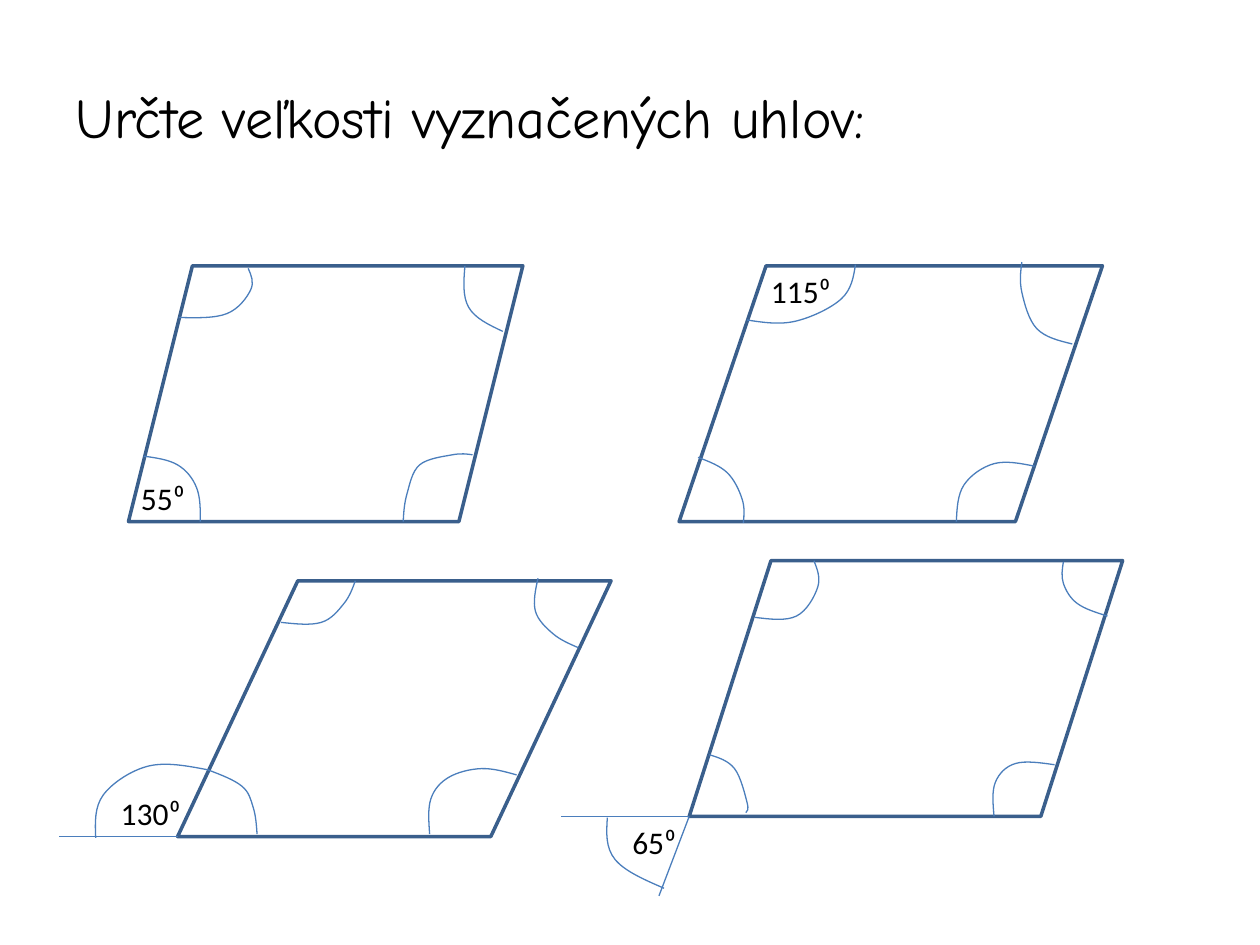
import pptx
import pptx.dml.color
import pptx.enum.shapes
import pptx.enum.text
import pptx.util
from lxml import etree
from pptx.util import Inches

BLACK = pptx.dml.color.RGBColor(0x00, 0x00, 0x00)
SIDE_BLUE = pptx.dml.color.RGBColor(0x3A, 0x5F, 0x8C)
ARC_BLUE = pptx.dml.color.RGBColor(0x4B, 0x7E, 0xBC)
SIDE_HEIGHT = 2.03

FIGURES = [
    {
        "box": (1.02, 2.11, 3.13, SIDE_HEIGHT), "slant": 0.25,
        "label": ("55⁰", 0, 1.64, 0.56), "rays": [],
        "arcs": [
            [(0.12, 1.51), (0.39, 1.58), (0.54, 1.76), (0.57, 2.03)],
            [(0.4, 0.41), (0.78, 0.38), (0.97, 0.19), (0.95, 0.02)],
            [(2.97, 0.52), (2.7, 0.33), (2.67, 0)],
            [(2.18, 2.03), (2.21, 1.81), (2.31, 1.58), (2.57, 1.5), (2.73, 1.5)],
        ],
    },
    {
        "box": (5.39, 2.11, 3.36, SIDE_HEIGHT), "slant": 0.34,
        "label": ("115⁰", 0.63, 0, 0.68), "rays": [],
        "arcs": [
            [(0.15, 1.52), (0.38, 1.64), (0.5, 1.85), (0.51, 2.04)],
            [(2.2, 2.03), (2.26, 1.74), (2.5, 1.57), (2.82, 1.59)],
            [(0.54, 0.43), (0.92, 0.44), (1.29, 0.26), (1.4, -0.01)],
            [(3.12, 0.62), (2.84, 0.5), (2.72, 0.21), (2.72, -0.03)],
        ],
    },
    {
        "box": (1.41, 4.61, 3.44, SIDE_HEIGHT), "slant": 0.47,
        "label": ("130⁰", -0.55, 1.64, 0.68), "rays": [(-0.94, 2.03)],
        "arcs": [
            [(-0.65, 2.04), (-0.59, 1.7), (-0.23, 1.47), (0.24, 1.5)],
            [(0.82, 0.33), (1.14, 0.33), (1.32, 0.18), (1.41, 0)],
            [(0.24, 1.5), (0.51, 1.63), (0.6, 1.8), (0.63, 2.01)],
            [(2, 2.01), (2.01, 1.73), (2.15, 1.56), (2.41, 1.49), (2.69, 1.54)],
            [(2.86, -0.02), (2.84, 0.24), (2.98, 0.42), (3.18, 0.53)],
        ],
    },
    {
        "box": (5.47, 4.45, 3.44, SIDE_HEIGHT), "slant": 0.32,
        "label": ("65⁰", -0.55, 2.03, 0.56), "rays": [(-1.02, 2.03), (-0.24, 2.66)],
        "arcs": [
            [(0.16, 1.54), (0.36, 1.65), (0.46, 1.92), (0.45, 2)],
            [(0.52, 0.45), (0.85, 0.44), (1.02, 0.21), (0.99, 0)],
            [(2.42, 2.03), (2.43, 1.76), (2.59, 1.61), (2.9, 1.62)],
            [(2.97, 0.01), (2.97, 0.18), (3.08, 0.34), (3.32, 0.44)],
            [(-0.65, 2.04), (-0.59, 2.37), (-0.2, 2.6)],
        ],
    },
]


def curve_axis(knots):
    """Return one coordinate of the start, controls and ends of a smooth curve."""
    inner = range(1, len(knots) - 1)
    tangents = {i: (knots[i + 1] - knots[i - 1]) / 6 for i in inner}
    values = [knots[0]]
    for i, (start, end) in enumerate(zip(knots, knots[1:])):
        leave = start + tangents[i] if i in tangents else None
        arrive = end - tangents[i + 1] if i + 1 in tangents else (end + leave) / 2
        if leave is None:
            leave = (start + arrive) / 2
        values += [leave, arrive, end]
    return values


def bend_segments(shape):
    """Turn each three line segments of a freeform into one cubic curve."""
    lines = list(shape._element.iter(pptx.oxml.ns.qn("a:lnTo")))
    for first, second, third in zip(lines[::3], lines[1::3], lines[2::3]):
        curve = etree.Element(pptx.oxml.ns.qn("a:cubicBezTo"))
        first.addprevious(curve)
        for line in (first, second, third):
            curve.append(line[0])
            line.getparent().remove(line)


def add_text(slide, box, text, font_name, size):
    """Add a one-line text box and return its text frame."""
    frame = slide.shapes.add_textbox(*map(Inches, box)).text_frame
    paragraph = frame.paragraphs[0]
    paragraph.text = text
    paragraph.font.name = font_name
    paragraph.font.size = pptx.util.Pt(size)
    paragraph.font.color.rgb = BLACK
    return frame


def add_title(slide, box):
    """Add the task heading."""
    frame = add_text(slide, box, "Určte veľkosti vyznačených uhlov:", "Comic Neue", 32)
    frame.word_wrap = True
    frame.vertical_anchor = pptx.enum.text.MSO_ANCHOR.MIDDLE


def style_outline(shape, color, width):
    """Give an unfilled shape a plain outline."""
    shape.shadow.inherit = False
    shape.fill.background()
    shape.line.color.rgb = color
    shape.line.width = pptx.util.Pt(width)


def add_arc(slide, left, top, knots):
    """Add an angle arc through knots relative to the given corner."""
    xs, ys = map(curve_axis, zip(*knots))
    points = [(Inches(left + x), Inches(top + y)) for x, y in zip(xs, ys)]
    builder = slide.shapes.build_freeform(*points[0])
    builder.add_line_segments(points[1:], close=False)
    arc = builder.convert_to_shape()
    bend_segments(arc)
    style_outline(arc, ARC_BLUE, 0.75)


def add_ray(slide, start, end):
    """Add a thin line that extends a side."""
    ray = slide.shapes.add_connector(
        pptx.enum.shapes.MSO_CONNECTOR.STRAIGHT, *map(Inches, start + end))
    ray.line.color.rgb = ARC_BLUE
    ray.line.width = pptx.util.Pt(0.75)
    etree.SubElement(ray._element.spPr, pptx.oxml.ns.qn("a:effectLst"))


def add_figure(slide, box, slant, label, rays, arcs):
    """Add a parallelogram with its rays, known angle and angle arcs."""
    left, top, _, height = box
    parallelogram = slide.shapes.add_shape(
        pptx.enum.shapes.MSO_SHAPE.PARALLELOGRAM, *map(Inches, box))
    parallelogram.adjustments[0] = slant
    style_outline(parallelogram, SIDE_BLUE, 2)
    for x, y in rays:
        add_ray(slide, (left, top + height), (left + x, top + y))
    text, x, y, width = label
    frame = add_text(slide, (left + x, top + y, width, 0.4), text, "Calibri", 18)
    frame.word_wrap = False
    frame.auto_size = pptx.enum.text.MSO_AUTO_SIZE.SHAPE_TO_FIT_TEXT
    for knots in arcs:
        add_arc(slide, left, top, knots)


def main():
    """Build and save the slide."""
    presentation = pptx.Presentation()
    presentation.slide_width = Inches(10)
    presentation.slide_height = Inches(7.5)
    slide = presentation.slides.add_slide(presentation.slide_layouts[6])
    add_title(slide, (0.5, 0.3, 9, 1.25))
    for figure in FIGURES:
        add_figure(slide, **figure)
    presentation.save("out.pptx")


if __name__ == "__main__":
    main()
